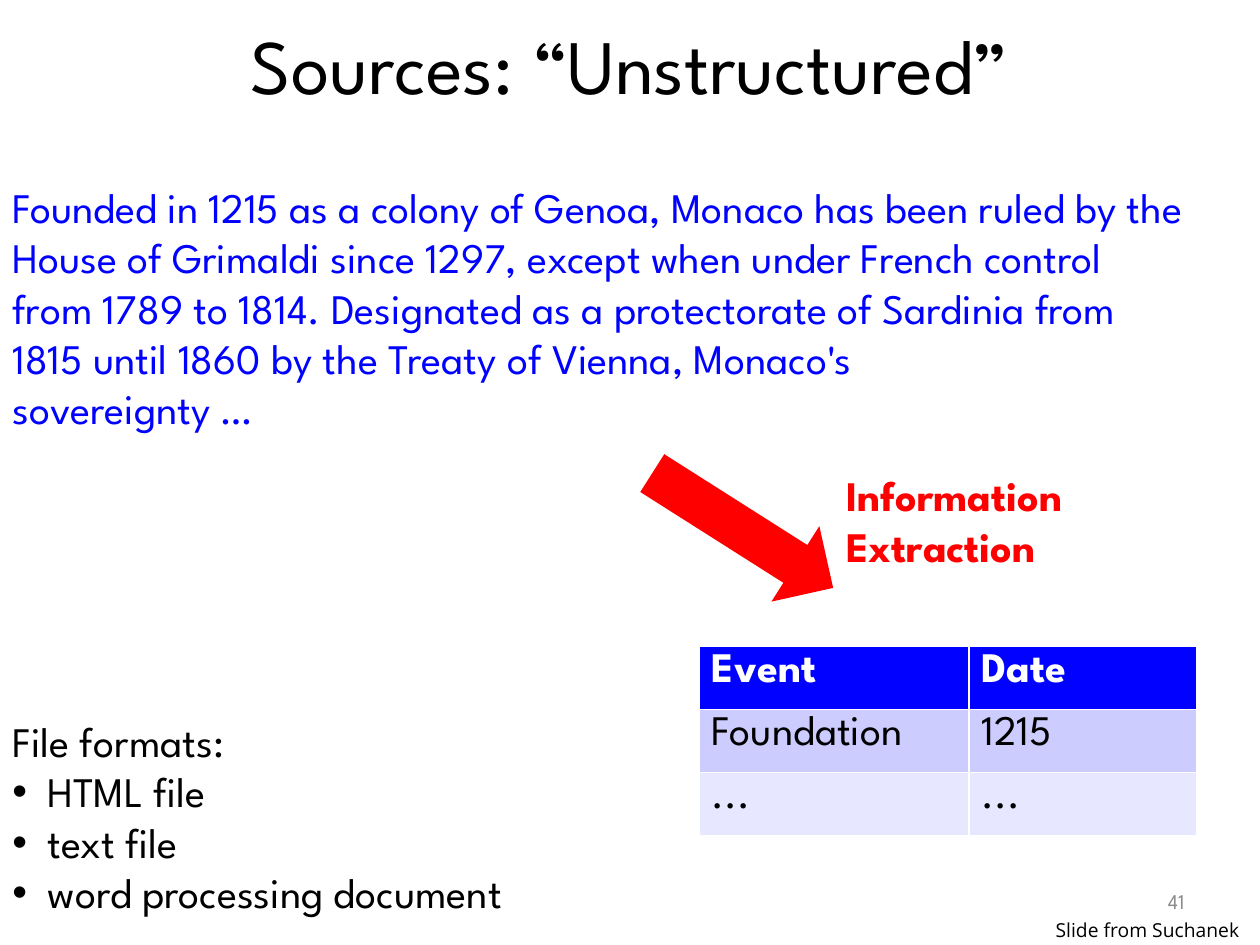
import dataclasses

import lxml.etree
import pptx
import pptx.dml.color
import pptx.enum.shapes
import pptx.enum.text
import pptx.oxml.ns
import pptx.util

Inches = pptx.util.Inches
Align = pptx.enum.text.PP_ALIGN
Anchor = pptx.enum.text.MSO_ANCHOR


@dataclasses.dataclass(frozen=True)
class Theme:
    font: str = "League Spartan"
    credit_font: str = "Open Sans"
    black: str = "000000"
    white: str = "FFFFFF"
    blue: str = "0001FF"
    red: str = "FF0000"
    gray: str = "8C8C8C"
    bands: tuple = ("CCCCFF", "E7E7FF")
    title_size: int = 44
    body_size: int = 24
    number_size: int = 12
    credit_size: int = 11


THEME = Theme()


def rgb(value):
    return pptx.dml.color.RGBColor.from_string(value)


def write_text(frame, lines, size=THEME.body_size, color=THEME.black,
               font=THEME.font, bold=False, align=Align.LEFT):
    for index, line in enumerate(lines):
        para = frame.paragraphs[0] if index == 0 else frame.add_paragraph()
        para.alignment = align
        span = para.add_run()
        span.text = line
        span.font.size = pptx.util.Pt(size)
        span.font.name = font
        span.font.bold = bold
        span.font.color.rgb = rgb(color)


def add_text(page, left, top, width, height, lines, anchor=Anchor.TOP, **style):
    box = page.shapes.add_textbox(
        Inches(left), Inches(top), Inches(width), Inches(height))
    frame = box.text_frame
    frame.word_wrap = True
    frame.vertical_anchor = anchor
    write_text(frame, lines, **style)
    return box


def add_bullet(para, indent):
    properties = para._p.get_or_add_pPr()
    properties.set("marL", str(Inches(indent)))
    properties.set("indent", str(-Inches(indent)))
    font = lxml.etree.SubElement(properties, pptx.oxml.ns.qn("a:buFont"))
    font.set("typeface", "Arial")
    bullet = lxml.etree.SubElement(properties, pptx.oxml.ns.qn("a:buChar"))
    bullet.set("char", "•")


def add_arrow(page, left, top, width, height, rotation):
    arrow = page.shapes.add_shape(
        pptx.enum.shapes.MSO_SHAPE.DOWN_ARROW,
        Inches(left), Inches(top), Inches(width), Inches(height))
    arrow.rotation = rotation
    arrow.shadow.inherit = False
    arrow.fill.solid()
    arrow.fill.fore_color.rgb = rgb(THEME.red)
    arrow.line.fill.background()


def add_event_table(page, left, top, widths, row_height, rows):
    table = page.shapes.add_table(
        len(rows), len(widths), Inches(left), Inches(top),
        Inches(sum(widths)), Inches(row_height * len(rows))).table
    for column, width in zip(table.columns, widths):
        column.width = Inches(width)
    fills = (THEME.blue, *THEME.bands)
    for row, (values, fill) in enumerate(zip(rows, fills)):
        header = row == 0
        for column, value in enumerate(values):
            cell = table.cell(row, column)
            cell.fill.solid()
            cell.fill.fore_color.rgb = rgb(fill)
            write_text(cell.text_frame, [value], bold=header,
                       color=THEME.white if header else THEME.black)


def main():
    deck = pptx.Presentation()
    deck.slide_width, deck.slide_height = Inches(10), Inches(7.5)
    page = deck.slides.add_slide(deck.slide_layouts[6])

    add_text(page, 0, 1.39, 9.5, 2.52, [
        "Founded in 1215 as a colony of Genoa, Monaco has been ruled by the "
        "House of Grimaldi since 1297, except when under French control from "
        "1789 to 1814. Designated as a protectorate of Sardinia from 1815 "
        "until 1860 by the Treaty of Vienna, Monaco's",
        "sovereignty …"], color=THEME.blue)
    add_text(page, 0.5, 0, 9, 1.01, ["Sources: “Unstructured”"],
             anchor=Anchor.MIDDLE, size=THEME.title_size, align=Align.CENTER)

    formats = add_text(page, 0, 5.63, 5, 1.72, [
        "File formats:", "HTML file", "text file", "word processing document"])
    for para in formats.text_frame.paragraphs[1:]:
        add_bullet(para, 0.28)

    add_event_table(page, 5.55, 5.13, (2.14, 1.81), 0.5, (
        ("Event", "Date"), ("Foundation", "1215"), ("...", "...")))
    add_arrow(page, 5.54, 3.36, 0.71, 1.7, 302.4)
    add_text(page, 6.62, 3.68, 2.05, 0.91, ["Information", "Extraction"],
             color=THEME.red, bold=True)
    add_text(page, 7.17, 6.95, 2.33, 0.4, ["41"], anchor=Anchor.MIDDLE,
             size=THEME.number_size, color=THEME.gray, align=Align.RIGHT)
    add_text(page, 8.28, 7.24, 1.72, 0.29, ["Slide from Suchanek"],
             size=THEME.credit_size, font=THEME.credit_font)

    deck.save("out.pptx")


if __name__ == "__main__":
    main()
